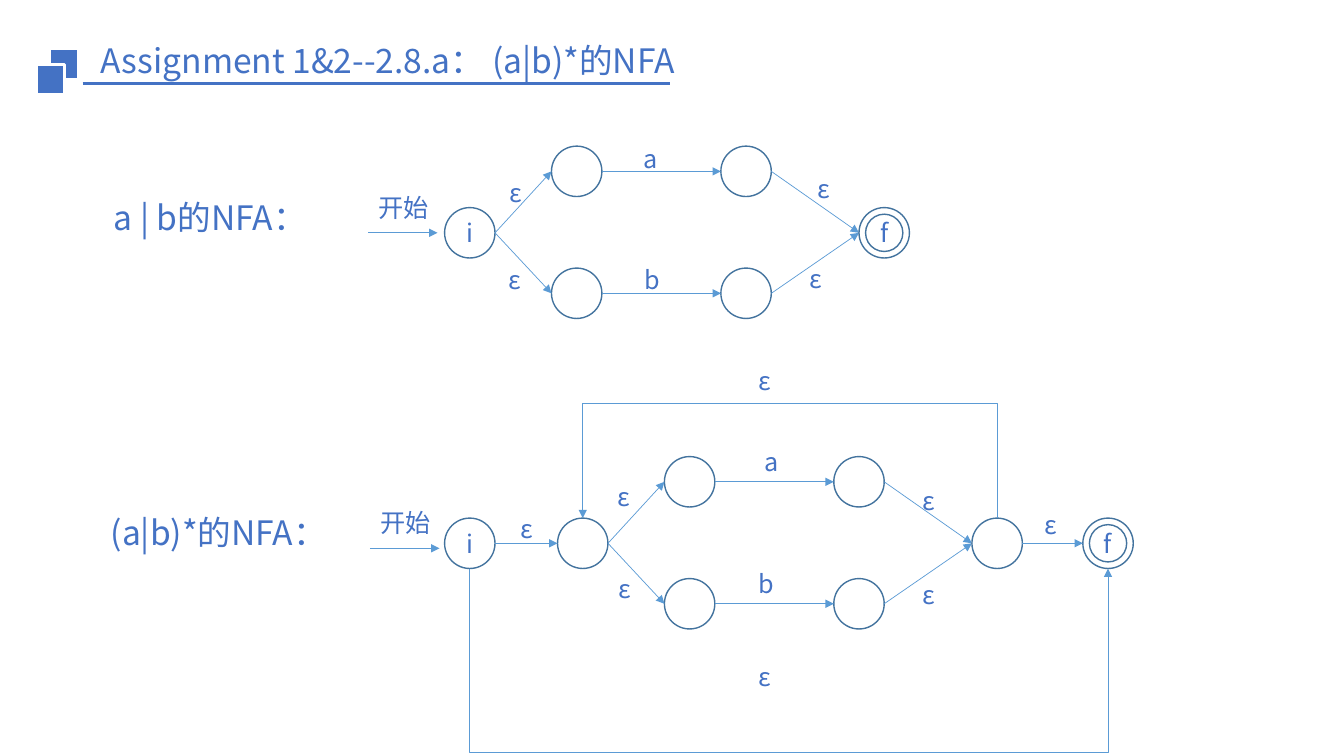
from lxml import etree
from pptx import Presentation
from pptx.dml.color import RGBColor
from pptx.enum import shapes, text
from pptx.oxml import ns
from pptx.util import Inches, Pt

BLUE = RGBColor(0x44, 0x72, 0xC4)
OUTLINE = RGBColor(0x43, 0x73, 0x9E)
ARROW = RGBColor(0x5B, 0x9B, 0xD5)
WHITE = RGBColor(0xFF, 0xFF, 0xFF)
FONT = "Noto Sans CJK SC"

STATE = 0.5  # diameter of a state circle
RADIUS = STATE / 2
RING_GAP = 0.065
LABEL_WIDTHS = {"ε": 0.31, "a": 0.33, "b": 0.35, "开始": 0.71}

EDGE_LABELS = [
    # NFA of a | b
    ("开始", 3.65, 1.86),
    ("ε", 4.95, 1.71), ("ε", 4.94, 2.57), ("ε", 7.93, 2.56), ("ε", 8.01, 1.67),
    ("a", 6.28, 1.37), ("b", 6.29, 2.57),
    # NFA of (a|b)*
    ("开始", 3.67, 4.98),
    ("ε", 5.06, 5.04), ("ε", 6.03, 4.73), ("ε", 6.04, 5.64),
    ("ε", 9.05, 4.77), ("ε", 9.05, 5.7), ("ε", 10.26, 5),
    ("ε", 7.42, 3.58), ("ε", 7.42, 6.51),
    ("a", 7.48, 4.38), ("b", 7.42, 5.59),
]


def write(para, words, size):
    span = para.add_run()
    span.text = words
    span.font.size = Pt(size)
    span.font.name = FONT
    span.font.color.rgb = BLUE
    east_asian = etree.SubElement(span.font._element, ns.qn("a:ea"))
    east_asian.set("typeface", FONT)


def add_text(page, words, left, top, width, height, size=24, wrap=True):
    box = page.shapes.add_textbox(
        Inches(left), Inches(top), Inches(width), Inches(height))
    box.text_frame.word_wrap = wrap
    write(box.text_frame.paragraphs[0], words, size)
    return box.text_frame


def add_edge_label(page, words, left, top):
    frame = add_text(page, words, left, top, LABEL_WIDTHS[words], 0.4, 18, False)
    frame.paragraphs[0].alignment = text.PP_ALIGN.CENTER


def add_caption(page, words, left, top):
    frame = add_text(page, words, left, top, 2.4, 0.62)
    frame.paragraphs[0].line_spacing = 0.85


def add_square(page, left, top):
    square = page.shapes.add_shape(
        shapes.MSO_SHAPE.RECTANGLE,
        Inches(left), Inches(top), Inches(0.27), Inches(0.29))
    square.shadow.inherit = False
    square.fill.solid()
    square.fill.fore_color.rgb = BLUE
    square.line.color.rgb = WHITE
    square.line.width = Pt(1.5)


def add_circle(page, left, top, diameter):
    circle = page.shapes.add_shape(
        shapes.MSO_SHAPE.OVAL,
        Inches(left), Inches(top), Inches(diameter), Inches(diameter))
    circle.shadow.inherit = False
    circle.line.color.rgb = OUTLINE
    circle.line.width = Pt(1)
    return circle


def add_state(page, left, middle, name="", final=False):
    """Draw a state centred on the height middle; a final one has two rings."""
    top = middle - RADIUS
    circle = add_circle(page, left, top, STATE)
    circle.fill.solid()
    circle.fill.fore_color.rgb = WHITE
    if name:
        frame = circle.text_frame
        frame.vertical_anchor = text.MSO_ANCHOR.MIDDLE
        frame.paragraphs[0].alignment = text.PP_ALIGN.CENTER
        write(frame.paragraphs[0], name, 18)
    if final:
        ring = add_circle(page, left + RING_GAP, top + RING_GAP,
                          STATE - 2 * RING_GAP)
        ring.fill.background()


def add_line(page, start, end, color, width):
    line = page.shapes.add_connector(
        shapes.MSO_CONNECTOR.STRAIGHT, *map(Inches, start + end))
    line.line.color.rgb = color
    line.line.width = Pt(width)
    etree.SubElement(line._element.spPr, ns.qn("a:effectLst"))
    return line


def add_arrowhead(shape):
    outline = shape._element.spPr.find(ns.qn("a:ln"))
    head = etree.SubElement(outline, ns.qn("a:tailEnd"))
    head.set("type", "triangle")


def add_arrow(page, start, end):
    add_arrowhead(add_line(page, start, end, ARROW, 0.5))


def add_loop(page, start_x, end_x, state_y, turn_y):
    """Draw a three-part arrow that leaves and returns to state_y."""
    builder = page.shapes.build_freeform(
        Inches(start_x), Inches(state_y), scale=1.0)
    corners = [(start_x, turn_y), (end_x, turn_y), (end_x, state_y)]
    builder.add_line_segments(
        [(Inches(x), Inches(y)) for x, y in corners], close=False)
    loop = builder.convert_to_shape()
    loop.shadow.inherit = False
    loop.fill.background()
    loop.line.color.rgb = ARROW
    loop.line.width = Pt(0.5)
    add_arrowhead(loop)


def add_union(page, left, middle):
    """Draw the two branches a and b between states at left and left + 4.11."""
    first, second, last = left + 1.06, left + 2.74, left + 4.11
    for branch in (middle - 0.61, middle + 0.6):
        add_state(page, first, branch)
        add_state(page, second, branch)
        add_arrow(page, (left + STATE, middle), (first, branch))
        add_arrow(page, (first + STATE, branch), (second, branch))
        add_arrow(page, (second + STATE, branch), (last, middle))


def add_heading(page):
    add_line(page, (0.82, 0.83), (6.65, 0.83), BLUE, 2.25)
    add_square(page, 0.5, 0.49)
    add_square(page, 0.37, 0.64)
    frame = add_text(page, "Assignment 1&2--2.8.a： (a|b)*的NFA",
                     0.9, 0.35, 7.17, 0.5)
    frame.vertical_anchor = text.MSO_ANCHOR.MIDDLE


def add_choice_nfa(page):
    middle = 2.31
    add_caption(page, "a | b的NFA：", 1.03, 1.97)
    add_arrow(page, (3.65, middle), (4.34, middle))
    add_state(page, 4.41, middle, "i")
    add_union(page, 4.41, middle)
    add_state(page, 8.52, middle, "f", final=True)


def add_star_nfa(page):
    middle = 5.39
    start, split, join, end = 4.41, 5.53, 9.64, 10.74
    add_caption(page, "(a|b)*的NFA：", 1, 5.09)
    add_arrow(page, (3.67, 5.44), (4.36, 5.44))
    add_state(page, start, middle, "i")
    add_state(page, split, middle)
    add_union(page, split, middle)
    add_state(page, join, middle)
    add_state(page, end, middle, "f", final=True)
    add_arrow(page, (start + STATE, middle), (split, middle))
    add_arrow(page, (join + STATE, middle), (end, middle))
    add_loop(page, join + RADIUS, split + RADIUS, middle - RADIUS, 4)
    add_loop(page, start + RADIUS, end + RADIUS, middle + RADIUS, 7.46)


def main():
    deck = Presentation()
    deck.slide_width = Inches(13.33)
    deck.slide_height = Inches(7.5)
    page = deck.slides.add_slide(deck.slide_layouts[6])
    add_heading(page)
    add_choice_nfa(page)
    add_star_nfa(page)
    for words, left, top in EDGE_LABELS:
        add_edge_label(page, words, left, top)
    deck.save("out.pptx")


if __name__ == "__main__":
    main()
